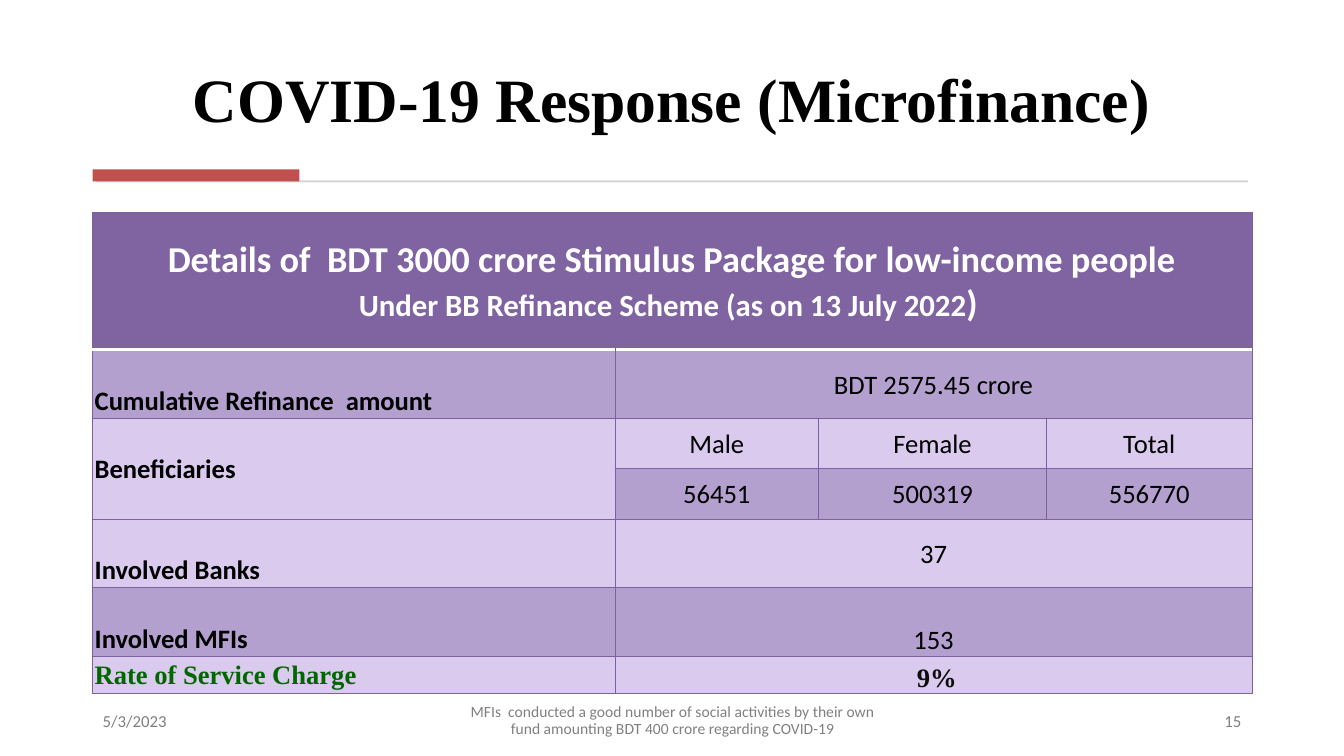
from dataclasses import dataclass

from lxml.etree import SubElement
from pptx import Presentation
from pptx.dml.color import RGBColor
from pptx.enum.shapes import MSO_SHAPE
from pptx.enum.text import MSO_ANCHOR, PP_ALIGN
from pptx.oxml.ns import qn
from pptx.util import Inches, Pt


@dataclass(frozen=True)
class Theme:
    sans: str = "Calibri"
    serif: str = "Times New Roman"
    black: str = "000000"
    white: str = "FFFFFF"
    gray: str = "808080"
    rule: str = "D5D5D5"
    accent: str = "C0504D"
    header: str = "8064A2"
    dark_band: str = "B4A0CF"
    light_band: str = "DACAED"
    border: str = "7D60A0"
    green: str = "006600"
    near_black: str = "0D0D0D"
    title_size: float = 44
    heading_size: float = 26
    subheading_size: float = 22
    body_size: float = 19
    footer_size: float = 12
    note_size: float = 11.1


THEME = Theme()
WIDTH, HEIGHT = Inches(13.33), Inches(7.5)
LEFT, SPAN = 6.9, 86.2
FOOTER_TOP, FOOTER_HEIGHT = 92.67, 5.33
COLUMNS = (38.86, 15.15, 16.95, 15.3)
ROWS = (18.13, 9.07, 6.67, 6.67, 9.07, 9.07, 4.93)
LABEL_DROP = 0.34


def across(share):
    return int(WIDTH * share / 100)


def down(share):
    return int(HEIGHT * share / 100)


def place(left, top, width, height):
    return across(left), down(top), across(width), down(height)


def style(font, size, color, bold=False, name=THEME.sans):
    font.name, font.size, font.bold = name, Pt(size), bold
    font.color.rgb = RGBColor.from_string(color)


def add_text(page, area, text, size, color, align, anchor=MSO_ANCHOR.MIDDLE,
             bold=False, name=THEME.sans, spacing=1.0):
    frame = page.shapes.add_textbox(*place(*area)).text_frame
    frame.word_wrap = True
    frame.vertical_anchor = anchor
    para = frame.paragraphs[0]
    para.text = text
    para.alignment = align
    para.line_spacing = spacing
    style(para.font, size, color, bold, name)


def add_bar(page, area, color):
    bar = page.shapes.add_shape(MSO_SHAPE.RECTANGLE, *place(*area))
    bar.shadow.inherit = False
    bar.fill.solid()
    bar.fill.fore_color.rgb = RGBColor.from_string(color)
    bar.line.fill.background()


def add_border(cell, side, color, width):
    line = SubElement(cell._tc.get_or_add_tcPr(), qn(f"a:ln{side}"), w=str(Pt(width)))
    fill = SubElement(line, qn("a:solidFill"))
    SubElement(fill, qn("a:srgbClr"), val=color)


def dress_cell(cell, row, column):
    cell.margin_left = cell.margin_right = cell.margin_top = Inches(0.02)
    cell.margin_bottom = 0
    cell.vertical_anchor = MSO_ANCHOR.MIDDLE
    for side in "LRTB":
        below_header = (row, side) in ((0, "B"), (1, "T"))
        color, width = (THEME.white, 2) if below_header else (THEME.border, 0.75)
        add_border(cell, side, color, width)
    dark = row in (1, 5) or (row == 3 and column > 0)
    band = THEME.dark_band if dark else THEME.light_band
    cell.fill.solid()
    cell.fill.fore_color.rgb = RGBColor.from_string(THEME.header if row == 0 else band)


def fill_cell(cell, text, align=PP_ALIGN.CENTER, color=THEME.black, bold=False,
              name=THEME.sans):
    para = cell.text_frame.paragraphs[0]
    para.text = text
    para.alignment = align
    style(para.font, THEME.body_size, color, bold, name)


def fill_header(cell):
    frame = cell.text_frame
    heading = frame.paragraphs[0]
    heading.text = "Details of  BDT 3000 crore Stimulus Package for low-income people"
    style(heading.font, THEME.heading_size, THEME.white, True)
    subheading = frame.add_paragraph()
    for text, size in (
        ("Under BB Refinance Scheme (as on 13 July 2022", THEME.subheading_size),
        (") ", THEME.heading_size),
    ):
        span = subheading.add_run()
        span.text = text
        style(span.font, size, THEME.white, True)
    for para in frame.paragraphs:
        para.alignment = PP_ALIGN.CENTER


def add_stimulus_table(page):
    area = place(LEFT, 28.13, sum(COLUMNS), sum(ROWS))
    table = page.shapes.add_table(len(ROWS), len(COLUMNS), *area).table
    table.first_row = table.horz_banding = False
    for column, share in zip(table.columns, COLUMNS):
        column.width = across(share)
    for row, share in zip(table.rows, ROWS):
        row.height = down(share)
    for row in range(len(ROWS)):
        for column in range(len(COLUMNS)):
            dress_cell(table.cell(row, column), row, column)

    table.cell(0, 0).merge(table.cell(0, 3))
    table.cell(2, 0).merge(table.cell(3, 0))
    for row in (1, 4, 5, 6):
        table.cell(row, 1).merge(table.cell(row, 3))

    fill_header(table.cell(0, 0))
    labels = {1: "Cumulative Refinance  amount", 2: "Beneficiaries",
              4: "Involved Banks", 5: "Involved MFIs"}
    for row, label in labels.items():
        fill_cell(table.cell(row, 0), label, PP_ALIGN.LEFT, bold=True)
        if row != 2:
            table.cell(row, 0).margin_top = Inches(LABEL_DROP)
    for row, value in {1: "BDT 2575.45 crore", 4: "37", 5: "153"}.items():
        fill_cell(table.cell(row, 1), value)
    beneficiaries = (("Male", "56451"), ("Female", "500319"), ("Total", "556770"))
    for column, texts in enumerate(beneficiaries, 1):
        for row, text in enumerate(texts, 2):
            fill_cell(table.cell(row, column), text)
    fill_cell(table.cell(6, 0), "Rate of Service Charge", PP_ALIGN.LEFT,
              THEME.green, True, THEME.serif)
    fill_cell(table.cell(6, 1), " 9%", color=THEME.near_black, bold=True,
              name=THEME.serif)
    for row in (5, 6):
        table.cell(row, 1).vertical_anchor = MSO_ANCHOR.BOTTOM


def add_footer(page):
    note = ("MFIs  conducted a good number of social activities by their own "
            "fund amounting BDT 400 crore regarding COVID-19")
    for left, width, text, size, align, spacing in (
        (LEFT, 21.15, "5/3/2023", THEME.footer_size, PP_ALIGN.LEFT, 1.0),
        (33.16, 33.76, note, THEME.note_size, PP_ALIGN.CENTER, 0.95),
        (72.77, 20.33, "15", THEME.footer_size, PP_ALIGN.RIGHT, 1.0),
    ):
        add_text(page, (left, FOOTER_TOP, width, FOOTER_HEIGHT), text, size,
                 THEME.gray, align, spacing=spacing)


def main():
    deck = Presentation()
    deck.slide_width, deck.slide_height = WIDTH, HEIGHT
    page = deck.slides.add_slide(deck.slide_layouts[6])
    add_text(page, (LEFT, 3.73, SPAN, 14.8), "COVID-19 Response (Microfinance)",
             THEME.title_size, THEME.black, PP_ALIGN.CENTER, MSO_ANCHOR.BOTTOM,
             True, THEME.serif)
    add_bar(page, (7.13, 23.87, 85.74, 0.27), THEME.rule)
    add_bar(page, (LEFT, 22.4, 15.38, 1.6), THEME.accent)
    add_footer(page)
    add_stimulus_table(page)
    deck.save("out.pptx")


if __name__ == "__main__":
    main()
